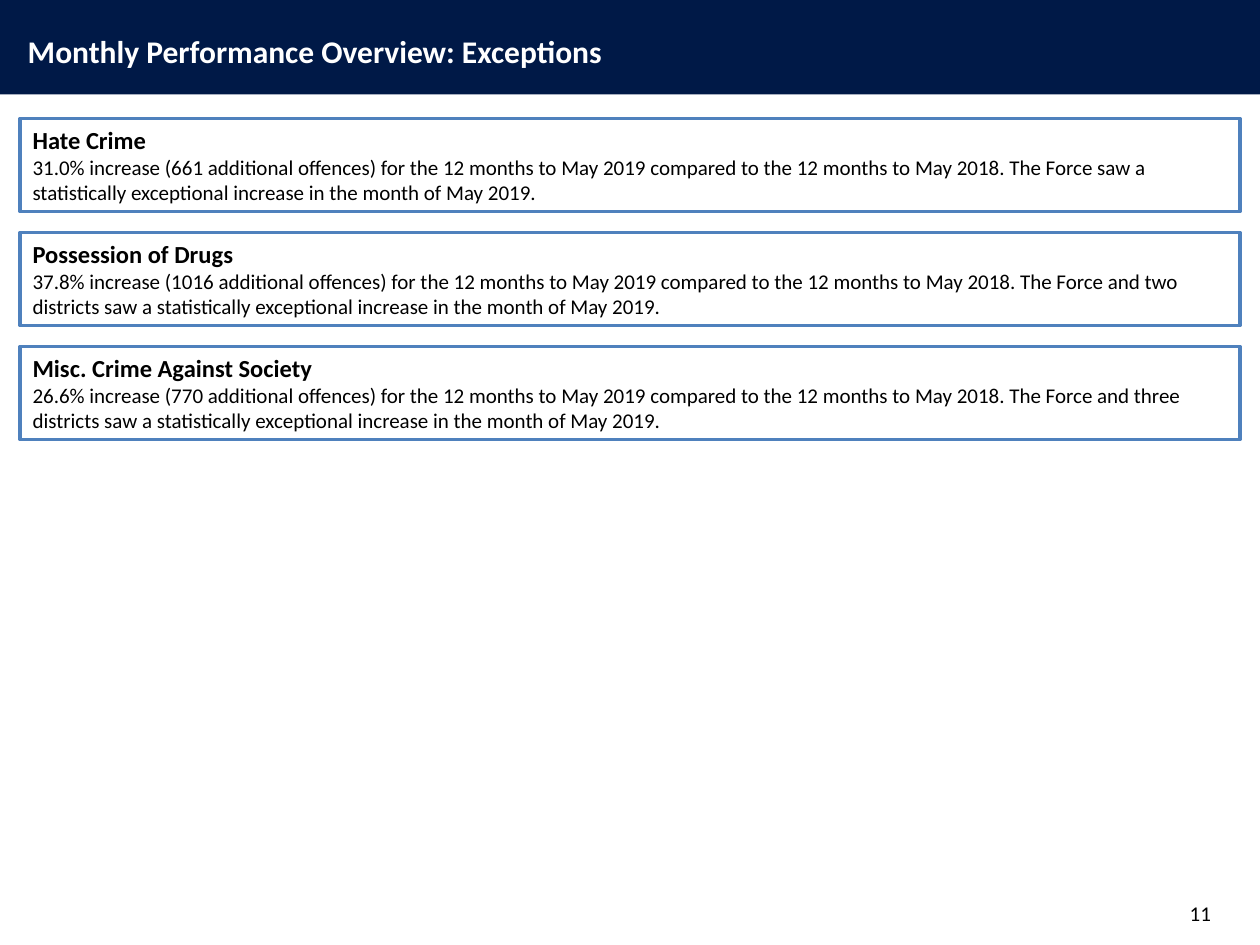
"""Build the monthly performance exceptions slide."""
from dataclasses import dataclass

import pptx
import pptx.dml.color
import pptx.enum.shapes
import pptx.enum.text
import pptx.util

TITLE = "Monthly Performance Overview: Exceptions"
PAGE_NUMBER = "11"
EXCEPTIONS = [
    ("Hate Crime",
     "31.0% increase (661 additional offences) for the 12 months to May 2019 compared to the "
     "12 months to May 2018. The Force saw a statistically exceptional increase in the month "
     "of May 2019."),
    ("Possession of Drugs",
     "37.8% increase (1016 additional offences) for the 12 months to May 2019 compared to the "
     "12 months to May 2018. The Force and two districts saw a statistically exceptional "
     "increase in the month of May 2019."),
    ("Misc. Crime Against Society",
     "26.6% increase (770 additional offences) for the 12 months to May 2019 compared to the "
     "12 months to May 2018. The Force and three districts saw a statistically exceptional "
     "increase in the month of May 2019."),
]


@dataclass(frozen=True)
class Theme:
    font: str = "Calibri"
    navy: str = "001947"
    blue: str = "4F81BD"
    white: str = "FFFFFF"
    black: str = "000000"
    title_size: int = 18
    heading_size: int = 14
    body_size: int = 12
    border: int = 2


THEME = Theme()
WIDTH, HEIGHT = 10, 7.5
BAND_HEIGHT = HEIGHT / 10
MARGIN = 0.16
FIRST_ROW, ROW_PITCH, ROW_HEIGHT = 0.94, 0.905, 0.74
LABEL_HEIGHT = 0.4
ANCHOR = pptx.enum.text.MSO_ANCHOR
ALIGN = pptx.enum.text.PP_ALIGN


def color(value):
    return pptx.dml.color.RGBColor.from_string(value)


def inches(*lengths):
    return [pptx.util.Inches(length) for length in lengths]


def add_panel(page, place, fill, line=None):
    panel = page.shapes.add_shape(pptx.enum.shapes.MSO_SHAPE.RECTANGLE, *inches(*place))
    panel.shadow.inherit = False
    panel.fill.solid()
    panel.fill.fore_color.rgb = color(fill)
    if line:
        panel.line.color.rgb = color(line)
        panel.line.width = pptx.util.Pt(THEME.border)
    else:
        panel.line.fill.background()
    return panel


def write(box, lines, ink, align=ALIGN.LEFT, anchor=ANCHOR.TOP):
    frame = box.text_frame
    frame.text = "\n".join(text for text, size, bold in lines)
    frame.word_wrap = True
    frame.auto_size = pptx.enum.text.MSO_AUTO_SIZE.NONE
    frame.vertical_anchor = anchor
    for para, (text, size, bold) in zip(frame.paragraphs, lines):
        para.alignment = align
        for span in para.runs:
            span.font.name = THEME.font
            span.font.size = pptx.util.Pt(size)
            span.font.bold = bold
            span.font.color.rgb = color(ink)


def main():
    deck = pptx.Presentation()
    deck.slide_width, deck.slide_height = inches(WIDTH, HEIGHT)
    page = deck.slides.add_slide(deck.slide_layouts[5])

    band = add_panel(page, (0, 0, WIDTH, BAND_HEIGHT), THEME.navy)
    title = page.shapes.title
    title.element.addprevious(band.element)
    title.left, title.top, title.width, title.height = inches(0.12, 0.2, 7.87, LABEL_HEIGHT)
    write(title, [(TITLE, THEME.title_size, True)], THEME.white)

    number = page.shapes.add_textbox(*inches(7.38, 7.05, 2.33, LABEL_HEIGHT))
    write(number, [(PAGE_NUMBER, THEME.body_size, False)], THEME.black,
          ALIGN.RIGHT, ANCHOR.MIDDLE)

    for row, (heading, body) in enumerate(EXCEPTIONS):
        place = (MARGIN, FIRST_ROW + row * ROW_PITCH, WIDTH - 2 * MARGIN, ROW_HEIGHT)
        panel = add_panel(page, place, THEME.white, THEME.blue)
        write(panel, [(heading, THEME.heading_size, True), (body, THEME.body_size, False)],
              THEME.black)

    deck.save("out.pptx")


if __name__ == "__main__":
    main()
